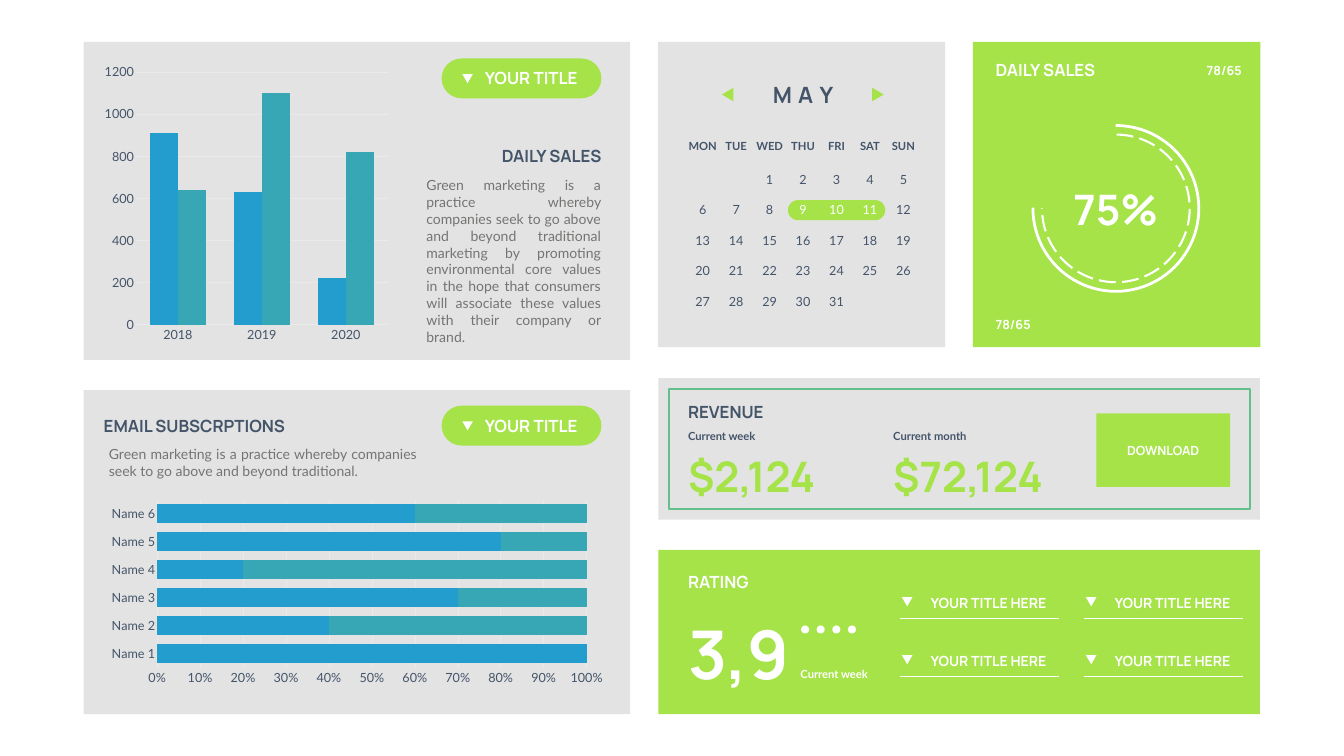
from dataclasses import dataclass
from typing import Optional

from lxml.etree import SubElement
from pptx import Presentation
from pptx.chart.data import CategoryChartData
from pptx.dml.color import RGBColor
from pptx.enum.chart import XL_CHART_TYPE, XL_TICK_MARK
from pptx.enum.dml import MSO_LINE
from pptx.enum.shapes import MSO_CONNECTOR, MSO_SHAPE
from pptx.enum.text import MSO_ANCHOR, MSO_AUTO_SIZE, PP_ALIGN
from pptx.oxml import parse_xml
from pptx.oxml.ns import nsdecls, qn
from pptx.util import Inches, Pt

LIME, GRAY, WHITE, NAVY, TEXT_GRAY = "A5E348", "E3E3E3", "FFFFFF", "445469", "737572"
BLUE, TEAL, GRID, GREEN = "229DCE", "37A7B6", "EAEAEA", "63C08A"
LEFT, CENTER, RIGHT, JUSTIFY = PP_ALIGN.LEFT, PP_ALIGN.CENTER, PP_ALIGN.RIGHT, PP_ALIGN.JUSTIFY


@dataclass
class Run:
    text: str
    size: float
    color: str
    font: str = "Manrope"
    bold: bool = True
    spacing: float = 0


@dataclass
class Box:
    x: float
    y: float
    w: float
    h: float

    def lengths(self) -> tuple:
        return Inches(self.x), Inches(self.y), Inches(self.w), Inches(self.h)


@dataclass
class ChartSpec:
    kind: XL_CHART_TYPE
    box: Box
    categories: list[str]
    series: list[tuple[str, list[int], str]]
    gap: int
    overlap: int = 0
    number_format: str = "General"
    plot: Optional[Box] = None


def rgb(value: str) -> RGBColor:
    return RGBColor.from_string(value)


def add_text(shapes, box: Box, *runs: Run, align=LEFT, middle: bool = False, wrap: bool = False) -> None:
    tf = shapes.add_textbox(*box.lengths()).text_frame
    tf.word_wrap = wrap
    tf.auto_size = MSO_AUTO_SIZE.SHAPE_TO_FIT_TEXT
    tf.vertical_anchor = MSO_ANCHOR.MIDDLE if middle else MSO_ANCHOR.TOP
    p = tf.paragraphs[0]
    p.alignment = align
    for run in runs:
        r = p.add_run()
        r.text = run.text
        r.font.name = run.font
        r.font.size = Pt(run.size)
        r.font.bold = run.bold
        r.font.color.rgb = rgb(run.color)
        if run.spacing:
            r.font._element.set("spc", str(int(run.spacing * 100)))


def add_shape(shapes, kind, box: Box, fill: str = "", line: str = "", width: float = 0,
              rotation: float = 0, adjust: tuple = ()):
    sp = shapes.add_shape(kind, *box.lengths())
    sp.shadow.inherit = False
    sp.rotation = rotation
    for i, value in enumerate(adjust):
        sp.adjustments[i] = value
    if fill:
        sp.fill.solid()
        sp.fill.fore_color.rgb = rgb(fill)
    else:
        sp.fill.background()
    if line:
        sp.line.color.rgb = rgb(line)
        sp.line.width = Pt(width)
    else:
        sp.line.fill.background()
    return sp


def add_down_marker(shapes, x: float, y: float) -> None:
    add_shape(shapes, MSO_SHAPE.ISOSCELES_TRIANGLE, Box(x, y, 0.21, 0.18), WHITE, rotation=180)


def add_pill_button(shapes, y: float) -> None:
    add_shape(shapes, MSO_SHAPE.ROUNDED_RECTANGLE, Box(8.76, y, 3.17, 0.79), LIME, adjust=(0.5,))
    add_text(shapes, Box(9.52, y + 0.14, 2.06, 0.5), Run("YOUR TITLE", 24, WHITE), middle=True)
    add_down_marker(shapes, 9.17, y + 0.31)


def add_rating_link(shapes, x: float, y: float) -> None:
    add_text(shapes, Box(x + 0.5, y, 2.5, 0.44), Run("YOUR TITLE HERE", 20, WHITE), middle=True)
    add_down_marker(shapes, x + 0.03, y + 0.11)
    line_y = Inches(y + 0.52)
    cxn = shapes.add_connector(MSO_CONNECTOR.STRAIGHT, Inches(x), line_y, Inches(x + 3.14), line_y)
    cxn.line.color.rgb = rgb(WHITE)
    cxn.line.width = Pt(1)
    SubElement(cxn._element.spPr, qn("a:effectLst"))


def style_font(font) -> None:
    font.name = "Lato"
    font.size = Pt(18)
    font.color.rgb = rgb(NAVY)


def add_chart(shapes, spec: ChartSpec) -> None:
    data = CategoryChartData()
    data.categories = spec.categories
    for name, values, _ in spec.series:
        data.add_series(name, values)
    chart = shapes.add_chart(spec.kind, *spec.box.lengths(), data).chart
    chart.has_legend = False
    chart.has_title = False
    style_font(chart.font)
    plot = chart.plots[0]
    plot.vary_by_categories = False
    plot.gap_width = spec.gap
    plot.overlap = spec.overlap
    for series, (_, _, color) in zip(plot.series, spec.series):
        series.format.fill.solid()
        series.format.fill.fore_color.rgb = rgb(color)
    cat_axis, val_axis = chart.category_axis, chart.value_axis
    for axis in (cat_axis, val_axis):
        axis.major_tick_mark = axis.minor_tick_mark = XL_TICK_MARK.NONE
        style_font(axis.tick_labels.font)
    val_axis.has_major_gridlines = True
    for line in (cat_axis.format.line, val_axis.major_gridlines.format.line):
        line.color.rgb = rgb(GRID)
        line.width = Pt(0.75)
    val_axis.format.line.fill.background()
    val_axis.tick_labels.number_format = spec.number_format
    val_axis.tick_labels.number_format_is_linked = False
    if spec.plot:
        area = chart.element.find(".//" + qn("c:plotArea"))
        for layout in area.findall(qn("c:layout")):
            area.remove(layout)
        b = spec.plot
        area.insert(0, parse_xml(
            f'<c:layout {nsdecls("c")}><c:manualLayout><c:layoutTarget val="inner"/>'
            f'<c:xMode val="edge"/><c:yMode val="edge"/><c:x val="{b.x}"/><c:y val="{b.y}"/>'
            f'<c:w val="{b.w}"/><c:h val="{b.h}"/></c:manualLayout></c:layout>'))


def add_sales_panel(shapes) -> None:
    add_chart(shapes, ChartSpec(
        XL_CHART_TYPE.COLUMN_CLUSTERED, Box(1.96, 1.16, 5.85, 5.74), ["2018", "2019", "2020"],
        [("Series 1", [910, 630, 220], BLUE), ("Series 2", [640, 1100, 820], TEAL)], gap=100))
    add_pill_button(shapes, 1.16)
    add_text(shapes, Box(9.77, 2.84, 2.26, 0.5), Run("DAILY SALES", 24, NAVY), align=RIGHT)
    add_text(shapes, Box(8.36, 3.46, 3.66, 3.13), Run(
        "Green marketing is a practice whereby companies seek to go above and beyond traditional "
        "marketing by promoting environmental core values in the hope that consumers will associate "
        "these values with their company or brand.", 20, TEXT_GRAY, "Lato", False),
        align=JUSTIFY, wrap=True)


def add_calendar(shapes) -> None:
    first_x, step_x = 13.94, (17.92 - 13.94) / 6
    first_y, step_y = 3.36, (5.78 - 3.36) / 4
    add_text(shapes, Box(15.18, 1.56, 1.5, 0.64), Run("MA", 32, NAVY, spacing=9), Run("Y", 32, NAVY),
             align=CENTER)
    for x, rotation in ((14.3, 270), (17.28, 90)):
        add_shape(shapes, MSO_SHAPE.ISOSCELES_TRIANGLE, Box(x, 1.76, 0.27, 0.23), LIME, rotation=rotation)
    add_shape(shapes, MSO_SHAPE.ROUNDED_RECTANGLE, Box(15.63, 3.97, 1.93, 0.4), LIME, adjust=(0.5,))
    for col, name in enumerate(["MON", "TUE", "WED", "THU", "FRI", "SAT", "SUN"]):
        add_text(shapes, Box(first_x + col * step_x - 0.42, 2.72, 0.84, 0.37),
                 Run(name, 16, NAVY, "Lato"), align=CENTER, middle=True)
    for day in range(1, 32):
        row, col = divmod(day + 1, 7)
        w = 0.35 if day < 10 else 0.5
        color = WHITE if 9 <= day <= 11 else NAVY
        add_text(shapes, Box(first_x + col * step_x - w / 2, first_y + row * step_y, w, 0.4),
                 Run(str(day), 18, color, "Lato", False), align=CENTER, middle=True)


def add_progress_panel(shapes) -> None:
    add_text(shapes, Box(19.65, 1.14, 2.26, 0.5), Run("DAILY SALES", 24, WHITE))
    gauge = shapes.add_group_shape().shapes
    add_shape(gauge, MSO_SHAPE.ARC, Box(20.49, 2.49, 3.29, 3.29), line=WHITE, width=4,
              adjust=(161.91, 108.3))
    dashes = add_shape(gauge, MSO_SHAPE.ARC, Box(20.67, 2.67, 2.93, 2.93), line=WHITE, width=3,
                       adjust=(162.32, 108.08))
    dashes.line.dash_style = MSO_LINE.LONG_DASH
    add_text(gauge, Box(21.17, 3.58, 1.93, 1.11), Run("75%", 60, WHITE), align=CENTER, middle=True)
    for x, y, align in ((19.65, 6.23, LEFT), (23.79, 1.19, RIGHT)):
        add_text(shapes, Box(x, y, 0.94, 0.4), Run("78/65", 18, WHITE), align=align, middle=True)


def add_email_panel(shapes) -> None:
    add_chart(shapes, ChartSpec(
        XL_CHART_TYPE.BAR_STACKED_100, Box(1.96, 9.76, 10.07, 4.04), [f"Name {i}" for i in range(1, 7)],
        [("Series 1", [100, 40, 70, 20, 80, 60], BLUE), ("Series 2", [0, 60, 30, 80, 20, 40], TEAL)],
        gap=50, overlap=100, number_format="0%", plot=Box(0.115, 0.038, 0.846, 0.825)))
    add_pill_button(shapes, 8.05)
    add_text(shapes, Box(2.06, 8.8, 6.31, 0.77), Run(
        "Green marketing is a practice whereby companies seek to go above and beyond traditional.",
        20, TEXT_GRAY, "Lato", False), align=JUSTIFY, wrap=True)
    add_text(shapes, Box(1.96, 8.19, 3.86, 0.5), Run("EMAIL SUBSCRPTIONS", 24, NAVY), middle=True)


def add_revenue_panel(shapes) -> None:
    add_shape(shapes, MSO_SHAPE.RECTANGLE, Box(13.27, 7.72, 11.52, 2.38), line=GREEN, width=3)
    add_text(shapes, Box(13.55, 7.93, 1.7, 0.5), Run("REVENUE", 24, NAVY))
    for x, period, amount, w in ((13.55, "Current week", "$2,124", 2.85),
                                 (17.62, "Current month", "$72,124", 3.3)):
        add_text(shapes, Box(x, 8.46, 1.75, 0.37), Run(period, 16, NAVY, "Lato"), middle=True)
        add_text(shapes, Box(x, 8.88, w, 1.11), Run(amount, 60, LIME))
    add_shape(shapes, MSO_SHAPE.RECTANGLE, Box(21.75, 8.2, 2.65, 1.46), LIME)
    add_text(shapes, Box(22.21, 8.73, 1.73, 0.4), Run("DOWNLOAD", 18, WHITE), align=CENTER, middle=True)


def add_rating_panel(shapes) -> None:
    add_text(shapes, Box(13.55, 11.29, 1.48, 0.5), Run("RATING", 24, WHITE))
    add_text(shapes, Box(13.55, 12.09, 2.24, 1.72), Run("3,9", 96, WHITE))
    add_text(shapes, Box(15.78, 13.19, 1.57, 0.37), Run("Current week", 16, WHITE, "Lato"), middle=True)
    for i in range(4):
        add_shape(shapes, MSO_SHAPE.OVAL, Box(15.89 + i * 0.31, 12.41, 0.16, 0.16), WHITE)
    for y in (11.74, 12.89):
        for x in (17.86, 21.51):
            add_rating_link(shapes, x, y)


def main() -> None:
    prs = Presentation()
    prs.slide_width, prs.slide_height = Inches(26.66), Inches(15)
    shapes = prs.slides.add_slide(prs.slide_layouts[6]).shapes
    for box, fill, add_content in (
        (Box(1.66, 0.83, 10.84, 6.31), GRAY, add_sales_panel),
        (Box(13.05, 0.83, 5.7, 6.06), GRAY, add_calendar),
        (Box(19.3, 0.83, 5.7, 6.06), LIME, add_progress_panel),
        (Box(1.66, 7.74, 10.84, 6.43), GRAY, add_email_panel),
        (Box(13.06, 7.5, 11.93, 2.81), GRAY, add_revenue_panel),
        (Box(13.06, 10.91, 11.93, 3.26), LIME, add_rating_panel),
    ):
        add_shape(shapes, MSO_SHAPE.RECTANGLE, box, fill)
        add_content(shapes)
    prs.save("out.pptx")


if __name__ == "__main__":
    main()
